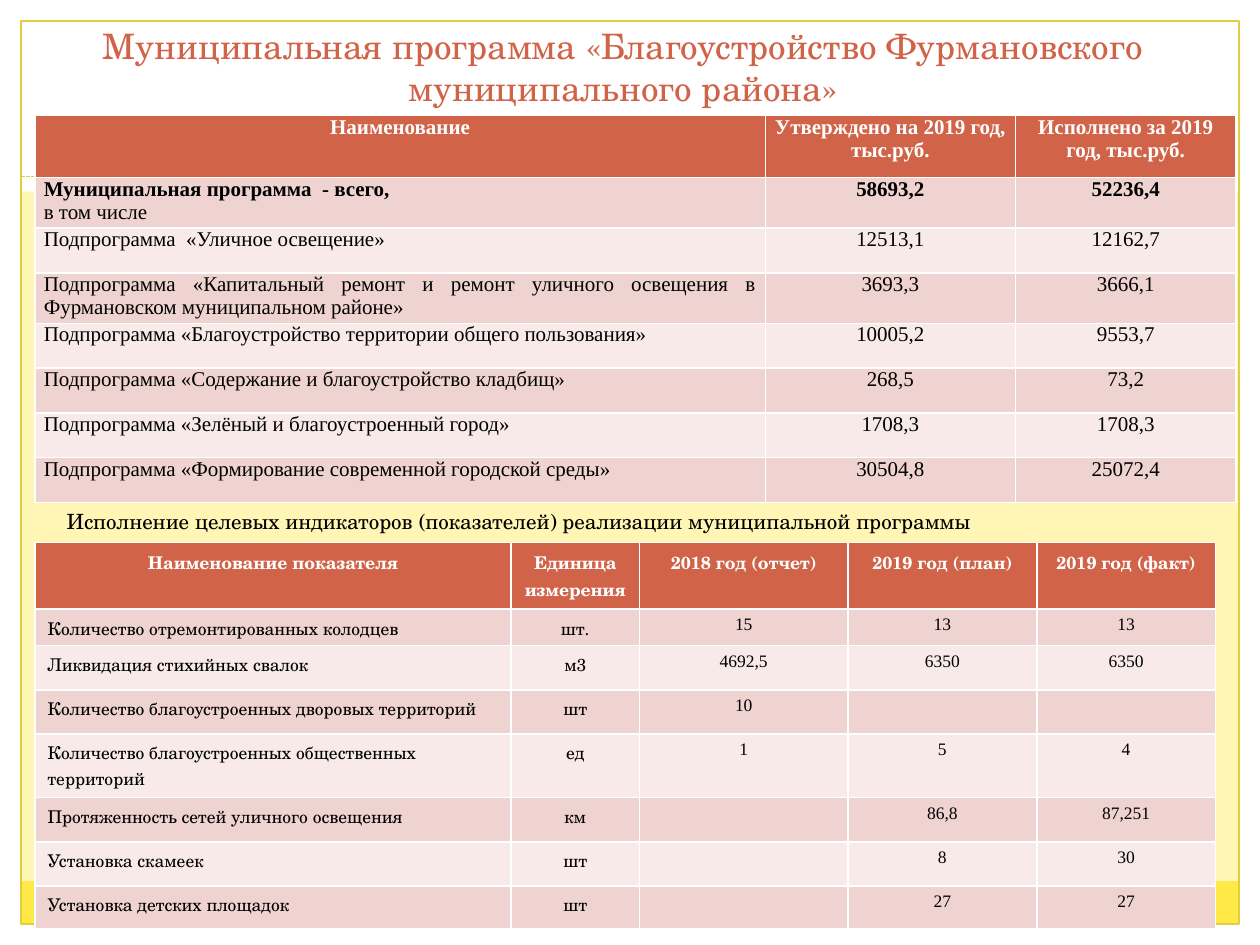
from pptx import Presentation
from pptx.dml.color import RGBColor
from pptx.enum.dml import MSO_LINE
from pptx.enum.shapes import MSO_CONNECTOR, MSO_SHAPE
from pptx.enum.text import MSO_ANCHOR, PP_ALIGN
from pptx.oxml.ns import qn
from pptx.util import Pt
from lxml.etree import SubElement

SERIF = "Times New Roman"
SCHOOL = "TeX Gyre Schola"
WHITE, BLACK, RED, GOLD = "FFFFFF", "000000", "D16349", "E1CE3F"
BANDS = ("EED3D0", "F7EAE9")

PROGRAMMES = [
    ("Наименование", "Утверждено на 2019 год, тыс.руб.", "Исполнено за 2019 год, тыс.руб."),
    ("Муниципальная программа  - всего,\nв том числе", "58693,2", "52236,4"),
    ("Подпрограмма  «Уличное освещение»", "12513,1", "12162,7"),
    ("Подпрограмма «Капитальный ремонт и ремонт уличного освещения в "
     "Фурмановском муниципальном районе»", "3693,3", "3666,1"),
    ("Подпрограмма «Благоустройство территории общего пользования»", "10005,2", "9553,7"),
    ("Подпрограмма «Содержание и благоустройство кладбищ»", "268,5", "73,2"),
    ("Подпрограмма «Зелёный и благоустроенный город»", "1708,3", "1708,3"),
    ("Подпрограмма «Формирование современной городской среды»", "30504,8", "25072,4"),
]
INDICATORS = [
    ("Наименование показателя", "Единица измерения", "2018 год (отчет)",
     "2019 год (план)", "2019 год (факт)"),
    ("Количество отремонтированных колодцев", "шт.", "15", "13", "13"),
    ("Ликвидация стихийных свалок", "м3", "4692,5", "6350", "6350"),
    ("Количество благоустроенных дворовых территорий", "шт", "10", "", ""),
    ("Количество благоустроенных общественных территорий", "ед", "1", "5", "4"),
    ("Протяженность сетей уличного освещения", "км", "", "86,8", "87,251"),
    ("Установка скамеек", "шт", "", "8", "30"),
    ("Установка детских площадок", "шт", "", "27", "27"),
]


def color(value):
    return RGBColor.from_string(value)


def style(para, size, face, ink, bold=False, align=PP_ALIGN.LEFT):
    para.alignment = align
    font = para.font
    font.size, font.name, font.bold = Pt(size), face, bold
    font.color.rgb = color(ink)
    if not para.runs:
        para._p.get_or_add_endParaRPr().set("sz", str(size * 100))


def add_panel(page, left, top, width, height, fill=None, line=None):
    panel = page.shapes.add_shape(MSO_SHAPE.RECTANGLE, Pt(left), Pt(top), Pt(width), Pt(height))
    panel.shadow.inherit = False
    if fill:
        panel.fill.solid()
        panel.fill.fore_color.rgb = color(fill)
    else:
        panel.fill.background()
    if line:
        panel.line.color.rgb = color(line)
        panel.line.width = Pt(0.75)
    else:
        panel.line.fill.background()


def add_dashed_rule(page, left, right, top):
    rule = page.shapes.add_connector(MSO_CONNECTOR.STRAIGHT, Pt(left), Pt(top), Pt(right), Pt(top))
    rule.line.color.rgb = color(GOLD)
    rule.line.width = Pt(0.75)
    rule.line.dash_style = MSO_LINE.SQUARE_DOT
    SubElement(rule._element.spPr, qn("a:effectLst"))


def add_text(page, left, top, width, height, text, size, ink, align, anchor):
    box = page.shapes.add_textbox(Pt(left), Pt(top), Pt(width), Pt(height))
    frame = box.text_frame
    frame.word_wrap = True
    frame.vertical_anchor = anchor
    frame.text = text
    style(frame.paragraphs[0], size, SCHOOL, ink, align=align)


def add_grid(page, left, top, widths, heights, rows, style_cell):
    frame = page.shapes.add_table(len(rows), len(widths), Pt(left), Pt(top),
                                  Pt(sum(widths)), Pt(sum(heights)))
    table = frame.table
    for column, width in zip(table.columns, widths):
        column.width = Pt(width)
    for index, (row, height, texts) in enumerate(zip(table.rows, heights, rows)):
        row.height = Pt(height)
        for position, (cell, text) in enumerate(zip(row.cells, texts)):
            cell.text = text
            cell.fill.solid()
            cell.fill.fore_color.rgb = color(BANDS[(index - 1) % 2] if index else RED)
            style_cell(cell, index, position)


def style_programme(cell, row, column):
    cell.margin_left = cell.margin_right = Pt(5)
    cell.margin_top = cell.margin_bottom = 0
    align = PP_ALIGN.JUSTIFY if row and column == 0 else PP_ALIGN.CENTER
    for number, para in enumerate(cell.text_frame.paragraphs):
        style(para, 12, SERIF, BLACK if row else WHITE, row < 2 and number == 0, align)


def style_indicator(cell, row, column):
    numeric = row > 0 and column > 1
    align = PP_ALIGN.LEFT if row and column == 0 else PP_ALIGN.CENTER
    style(cell.text_frame.paragraphs[0], 10, SERIF if numeric else SCHOOL,
          BLACK if row else WHITE, row == 0, align)


def main():
    deck = Presentation()
    deck.slide_width, deck.slide_height = Pt(720), Pt(540)
    page = deck.slides.add_slide(deck.slide_layouts[6])
    page.background.fill.solid()
    page.background.fill.fore_color.rgb = color("FFF6B5")

    for edge in ((0, 528, 720, 12), (0, 0, 720, 109.5), (0, 0, 12, 540), (708, 0, 12, 540)):
        add_panel(page, *edge, fill=WHITE)
    add_panel(page, 12, 503.5, 696, 24.5, fill="FFE947")
    add_panel(page, 12, 12, 696, 516, line=GOLD)
    add_dashed_rule(page, 12, 708, 100.8)

    add_text(page, 20, 15, 672, 50.5,
             "Муниципальная программа «Благоустройство Фурмановского муниципального района»",
             20, RED, PP_ALIGN.CENTER, MSO_ANCHOR.BOTTOM)
    add_grid(page, 20, 66, (417.3, 143, 126), [35.5] + [25.6] * 7, PROGRAMMES, style_programme)
    add_text(page, 31, 287.3, 670, 28,
             "Исполнение целевых индикаторов (показателей) реализации муниципальной программы",
             12, BLACK, PP_ALIGN.LEFT, MSO_ANCHOR.TOP)
    add_grid(page, 20, 310, (272, 73.5, 119, 108, 102), [38, 21] + [25.2] * 2 + [36.5]
             + [25.2] * 2 + [24.5], INDICATORS, style_indicator)
    deck.save("out.pptx")


if __name__ == "__main__":
    main()
